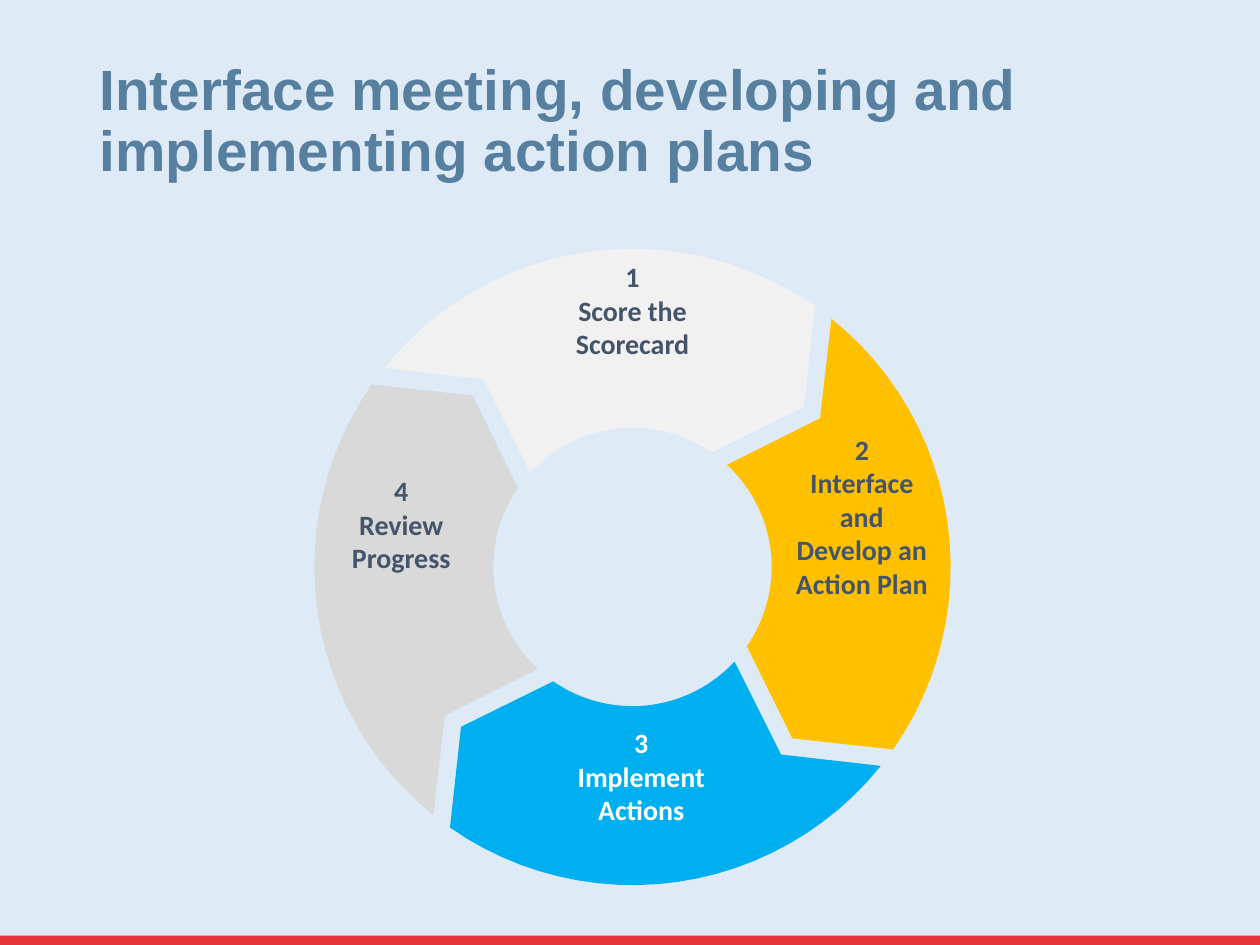
"""Build a slide with a four-step action plan cycle on a 100 by 75 grid."""
from dataclasses import dataclass
from math import cos, radians, sin

from pptx import Presentation
from pptx import util as u
from pptx.dml.color import RGBColor
from pptx.enum import shapes, text

COLUMNS, ROWS = 100, 75
CELL = u.Inches(0.1)
CENTRE = (50.2, 45)
OUTER_RADIUS, INNER_RADIUS = 25.25, 11.05
ARC_STEPS = 24

BACKGROUND = RGBColor(0xDE, 0xEB, 0xF7)
RED = RGBColor(0xE7, 0x34, 0x39)
TITLE_BLUE = RGBColor(0x57, 0x7F, 0x9F)
SLATE = RGBColor(0x44, 0x54, 0x6A)
WHITE = RGBColor(0xFF, 0xFF, 0xFF)
PALE_GREY = RGBColor(0xF1, 0xF1, 0xF1)
GREY = RGBColor(0xD9, 0xD9, 0xD9)
AMBER = RGBColor(0xFF, 0xC0, 0x00)
CYAN = RGBColor(0x00, 0xAF, 0xEF)


@dataclass(frozen=True)
class Box:
    left: float
    top: float
    width: float
    height: float

    def emu(self) -> tuple[int, ...]:
        return tuple(grid(n) for n in (self.left, self.top, self.width, self.height))


@dataclass(frozen=True)
class Step:
    number: int
    lines: tuple[str, ...]
    fill: RGBColor
    ink: RGBColor
    box: Box


STEPS = (
    Step(1, ("Score the", "Scorecard"), PALE_GREY, SLATE, Box(44.1, 20.4, 12.2, 9.8)),
    Step(2, ("Interface", "and", "Develop an", "Action Plan"), AMBER, SLATE,
         Box(62.5, 34.1, 11.8, 19.4)),
    Step(3, ("Implement", "Actions"), CYAN, WHITE, Box(44.1, 57.4, 13.6, 9.8)),
    Step(4, ("Review", "Progress"), GREY, SLATE, Box(24.5, 37.4, 14.7, 9.7)),
)


def grid(cells: float) -> int:
    return round(cells * CELL)


def polar(radius: float, degrees: float) -> tuple[int, int]:
    angle = radians(degrees)
    return (grid(CENTRE[0] + radius * cos(angle)),
            grid(CENTRE[1] + radius * sin(angle)))


def arc(radius: float, start: float, end: float) -> list[tuple[int, int]]:
    return [polar(radius, start + (end - start) * i / ARC_STEPS)
            for i in range(ARC_STEPS + 1)]


def paint(shape, colour: RGBColor) -> None:
    shape.fill.solid()
    shape.fill.fore_color.rgb = colour
    shape.line.fill.background()
    shape.shadow.inherit = False


def add_run(paragraph, words: str, font_name: str, size: float, colour: RGBColor) -> None:
    run = paragraph.add_run()
    run.text = words
    run.font.name = font_name
    run.font.size = u.Pt(size)
    run.font.bold = True
    run.font.color.rgb = colour


def add_title(slide, words: str) -> None:
    title = slide.shapes.title
    title.left, title.top, title.width, title.height = Box(6.9, 6.4, 86.2, 8.7).emu()
    frame = title.text_frame
    frame.word_wrap = True
    frame.auto_size = text.MSO_AUTO_SIZE.NONE
    frame.vertical_anchor = text.MSO_ANCHOR.BOTTOM
    paragraph = frame.paragraphs[0]
    paragraph.alignment = text.PP_ALIGN.LEFT
    paragraph.line_spacing = 0.9
    add_run(paragraph, words, "Arial", 32.4, TITLE_BLUE)


def add_segment(slide, step: Step) -> None:
    turn = 90 * (step.number - 2)
    outline = [
        *arc(OUTER_RADIUS, turn - 51.3, turn + 35),
        polar(18.6, turn + 47),
        *arc(INNER_RADIUS, turn + 34.7, turn - 47.2),
        polar(19, turn - 38.4),
    ]
    builder = slide.shapes.build_freeform(*outline[0])
    builder.add_line_segments(outline[1:], close=True)
    paint(builder.convert_to_shape(), step.fill)


def add_label(slide, step: Step) -> None:
    frame = slide.shapes.add_textbox(*step.box.emu()).text_frame
    frame.word_wrap = True
    frame.margin_left = frame.margin_right = frame.margin_bottom = 0
    frame.margin_top = u.Inches(0.02)
    heading, caption = frame.paragraphs[0], frame.add_paragraph()
    heading.alignment = caption.alignment = text.PP_ALIGN.CENTER
    add_run(heading, str(step.number), "Calibri", 16, step.ink)
    for index, line in enumerate(step.lines):
        if index:
            caption.add_line_break()
        add_run(caption, line, "Calibri", 16, step.ink)


def main() -> None:
    presentation = Presentation()
    presentation.slide_width, presentation.slide_height = grid(COLUMNS), grid(ROWS)
    slide = presentation.slides.add_slide(presentation.slide_layouts[5])
    slide.background.fill.solid()
    slide.background.fill.fore_color.rgb = BACKGROUND
    add_title(slide, "Interface meeting, developing and implementing action plans")
    footer = slide.shapes.add_shape(
        shapes.MSO_SHAPE.RECTANGLE, *Box(0, ROWS - 0.75, COLUMNS, 0.75).emu())
    paint(footer, RED)
    for step in STEPS:
        add_segment(slide, step)
        add_label(slide, step)
    presentation.save("out.pptx")


if __name__ == "__main__":
    main()
